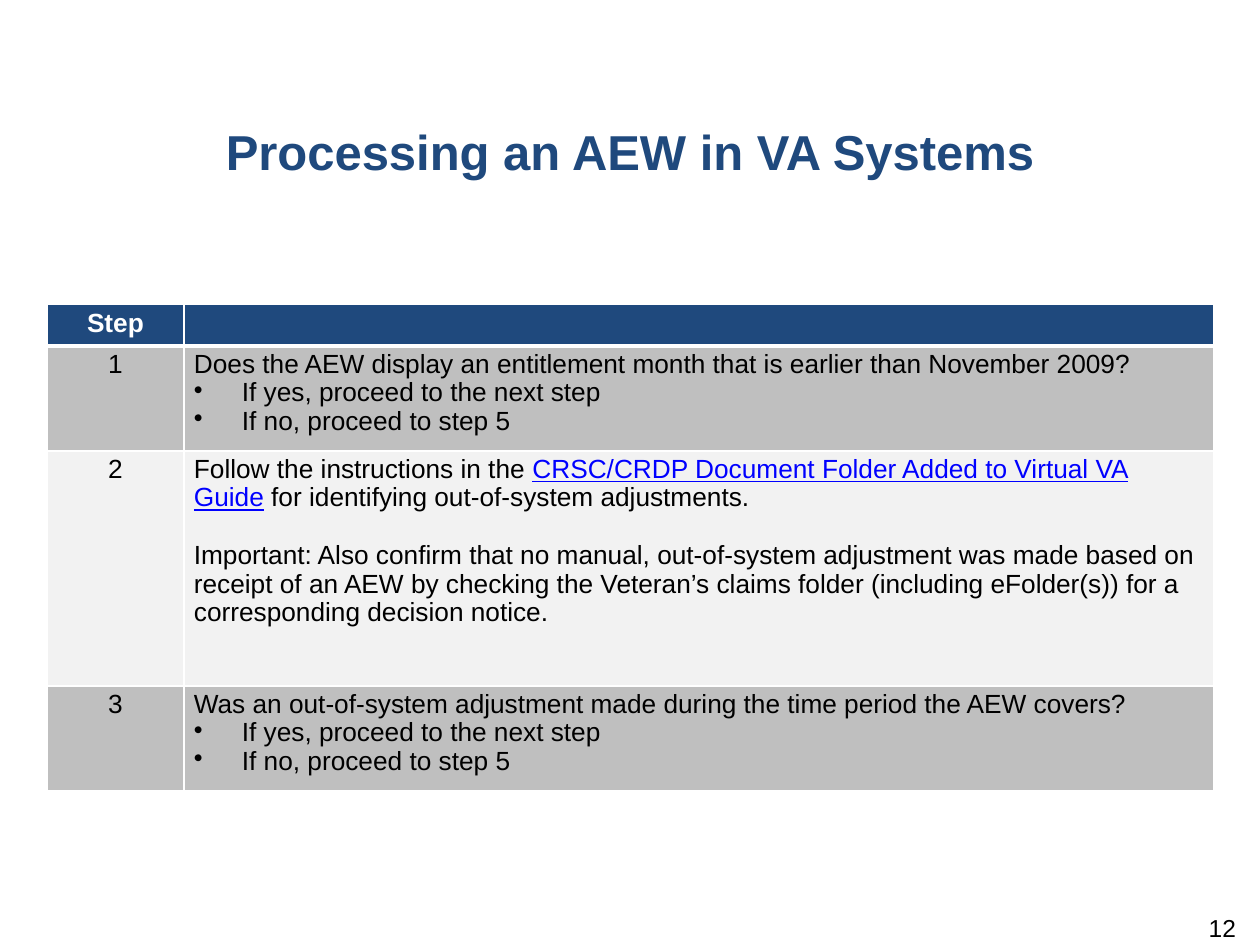
from lxml import etree
from pptx import Presentation
from pptx.dml.color import RGBColor
from pptx.enum.text import MSO_ANCHOR, MSO_AUTO_SIZE, PP_ALIGN
from pptx.oxml.ns import qn
from pptx.util import Emu, Pt

LEFT, CENTER, RIGHT = PP_ALIGN.LEFT, PP_ALIGN.CENTER, PP_ALIGN.RIGHT
TOP, NO_FIT = MSO_ANCHOR.TOP, MSO_AUTO_SIZE.NONE
TITLE_ONLY = 5
EMU_PER_PX = 914400 / 126

COLORS = {"navy": "1F497D", "gray": "BFBFBF", "pale": "F2F2F2",
          "white": "FFFFFF", "black": "000000", "link": "0000FF"}

# Text formats
TITLE = {"size": Pt(28), "bold": True, "color": "navy"}
NUMBER = {"size": Pt(14), "color": "black"}
HEADER = {"size": Pt(15), "bold": True, "color": "white"}
BODY = {"size": Pt(15), "bold": False, "color": "black"}
LINK = {**BODY, "color": "link", "underline": True}

# Paragraph formats
SPACED = {"line_spacing": 1.1, "space_after": Pt(6)}
TIGHT = {"line_spacing": 0.97}
NEW_BLOCK = {**TIGHT, "space_before": Pt(17)}


def px(length):
    return Emu(int(length * EMU_PER_PX))


def rgb(name):
    return RGBColor.from_string(COLORS[name])


def apply(target, values):
    for name, value in values.items():
        setattr(target, name, value)


class SlideBuilder:
    font = "Arial"

    def __init__(self, deck):
        self.page = deck.slides.add_slide(deck.slide_layouts[TITLE_ONLY])

    def fill_paragraph(self, para, spans, align, layout):
        """Fill a paragraph with (text, format) spans."""
        apply(para, {"alignment": align, **layout})
        for text, style in spans:
            span = para.add_run()
            span.text = text
            span.font.name = self.font
            apply(span.font, {k: v for k, v in style.items() if k != "color"})
            span.font.color.rgb = rgb(style["color"])

    def frame(self, box, text, style, align, bounds, margins):
        """Place a text shape and set its single line."""
        apply(box, dict(zip(("left", "top", "width", "height"), map(px, bounds))))
        frame = box.text_frame
        sides = ("margin_left", "margin_top", "margin_right", "margin_bottom")
        apply(frame, {"word_wrap": True, "auto_size": NO_FIT,
                      "vertical_anchor": TOP, **dict(zip(sides, map(px, margins)))})
        self.fill_paragraph(frame.paragraphs[0], [(text, style)], align, SPACED)

    def title(self, text, bounds):
        self.frame(self.page.shapes.title, text, TITLE, CENTER, bounds, (13, 6, 13, 6))

    def page_number(self, text, bounds):
        box = self.page.shapes.add_textbox(*map(px, bounds))
        self.frame(box, text, NUMBER, RIGHT, bounds, (13, 0, 13, 6))

    def bullet(self, para):
        properties = para._p.get_or_add_pPr()
        properties.set("marL", str(px(48)))
        properties.set("indent", str(-px(48)))
        etree.SubElement(properties, qn("a:buChar"), char="•")

    def borders(self, cell, widths):
        """Draw white borders; widths maps each side to points."""
        properties = cell._tc.get_or_add_tcPr()
        for side, width in widths.items():
            line = etree.SubElement(properties, qn(f"a:ln{side}"), w=str(Pt(width)))
            fill = etree.SubElement(line, qn("a:solidFill"))
            etree.SubElement(fill, qn("a:srgbClr"), val=COLORS["white"])

    def cell(self, cell, fill, widths, paragraphs, align):
        """Format a cell; paragraphs are (spans, layout, bulleted)."""
        self.borders(cell, widths)
        cell.fill.solid()
        cell.fill.fore_color.rgb = rgb(fill)
        apply(cell, {"margin_left": px(10), "margin_right": px(10),
                     "margin_top": px(5), "margin_bottom": px(5),
                     "vertical_anchor": TOP})
        frame = cell.text_frame
        for index, (spans, layout, bulleted) in enumerate(paragraphs):
            para = frame.add_paragraph() if index else frame.paragraphs[0]
            if bulleted:
                self.bullet(para)
            self.fill_paragraph(para, spans, align, layout)
        if not paragraphs:
            etree.SubElement(frame.paragraphs[0]._p, qn("a:endParaRPr"), sz="1500")

    def table(self, left, top, columns, heights, rows):
        table = self.page.shapes.add_table(
            len(rows), len(columns), px(left), px(top),
            px(sum(columns)), px(sum(heights))).table
        for column, width in zip(table.columns, columns):
            column.width = px(width)
        for row, height in zip(table.rows, heights):
            row.height = px(height)
        for index, (fill, step, details) in enumerate(rows):
            widths = {"L": 1, "R": 1, "T": 3 if index == 1 else 1,
                      "B": 3 if index == 0 else 1}
            for column, (content, align) in enumerate(((step, CENTER), (details, LEFT))):
                self.cell(table.cell(index, column), fill, widths, content, align)


def line(text, style=BODY, layout=TIGHT, bulleted=False):
    return [(text, style)], layout, bulleted


def question(text):
    return [line(text),
            line("If yes, proceed to the next step", bulleted=True),
            line("If no, proceed to step 5", bulleted=True)]


INSTRUCTIONS = [
    ([("Follow the instructions in the ", BODY),
      ("CRSC/CRDP Document Folder Added to Virtual VA Guide", LINK),
      (" for identifying out-of-system adjustments.", BODY)], TIGHT, False),
    line("Important: Also confirm that no manual, out-of-system adjustment was made "
         "based on receipt of an AEW by checking the Veteran’s claims folder "
         "(including eFolder(s)) for a corresponding decision notice.",
         layout=NEW_BLOCK),
]

STEPS = [
    ("navy", [line("Step", HEADER, {})], []),
    ("gray", [line("1")], question("Does the AEW display an entitlement month that "
                                   "is earlier than November 2009?")),
    ("pale", [line("2")], INSTRUCTIONS),
    ("gray", [line("3")], question("Was an out-of-system adjustment made during the "
                                   "time period the AEW covers?")),
]


def main():
    deck = Presentation()
    deck.slide_width, deck.slide_height = px(1260), px(945)
    slide = SlideBuilder(deck)

    # Heading and page number
    slide.title("Processing an AEW in VA Systems", (0, 110, 1260, 150))
    slide.page_number("12", (955, 910, 294, 50))

    # Step table
    slide.table(47, 304, (137, 1030), (42, 105, 235, 105), STEPS)

    deck.save("out.pptx")


if __name__ == "__main__":
    main()
